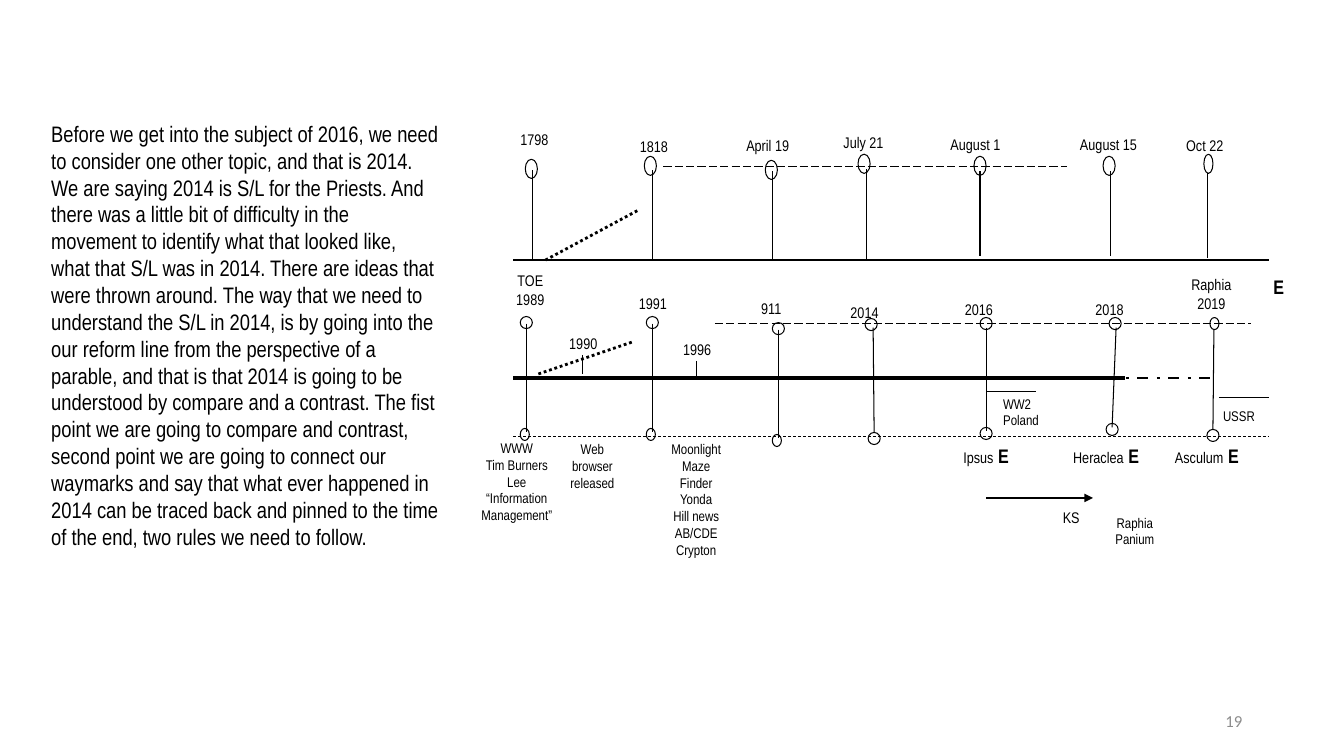
from dataclasses import dataclass
from lxml.etree import SubElement
from pptx import Presentation
from pptx.dml.color import RGBColor
from pptx.enum.dml import MSO_LINE as Dash
from pptx.enum.shapes import MSO_CONNECTOR as Conn, MSO_SHAPE as Form
from pptx.enum.text import MSO_ANCHOR as Anchor, MSO_AUTO_SIZE as Fit, PP_ALIGN as Align
from pptx.oxml.ns import qn
from pptx.util import Emu, Pt

PX = 9144  # 100 px to the inch
COLORS = {"ink": "000000", "page": "8C8C8C"}
FACE = "Arial Narrow"
Box = tuple[int, int, int, int]


@dataclass
class Label:
    text: str  # one paragraph a line
    box: Box
    size: int = 11
    align: Align = Align.CENTER
    mark: str = ""  # large bold ending
    inset: int = 4
    face: str = FACE
    color: str = "ink"
    anchor: Anchor = Anchor.TOP
    fit: Fit = Fit.NONE


@dataclass
class Rule:
    ends: Box  # x1, y1, x2, y2
    width: float = 0.75
    dash: Dash | None = None
    arrow: bool = False


@dataclass
class Post:
    """A dated waymark: its label, its stem and the rings on it."""
    label: Label
    stem: Box
    rings: list[Box]


BODY = (
    "Before we get into the subject of 2016, we need to consider one other topic, "
    "and that is 2014. We are saying 2014 is S/L for the Priests. And there was a "
    "little bit of difficulty in the movement to identify what that looked like, "
    "what that S/L was in 2014. There are ideas that were thrown around. The way "
    "that we need to understand the S/L in 2014, is by going into the our reform "
    "line from the perspective of a parable, and that is that 2014 is going to be "
    "understood by compare and a contrast. The fist point we are going to compare "
    "and contrast, second point we are going to connect our waymarks and say that "
    "what ever happened in 2014 can be traced back and pinned to the time of the "
    "end, two rules we need to follow."
)

POSTS = [
    # upper line
    Post(Label("1798", (509, 125, 42, 29)), (528, 169, 528, 258), [(521, 158, 12, 19)]),
    Post(Label("1818", (628, 132, 41, 22)), (647, 169, 647, 258), [(639, 155, 12, 19)]),
    Post(Label("April 19", (728, 131, 67, 29)), (766, 170, 766, 259), [(759, 159, 12, 19)]),
    Post(Label("July 21", (823, 128, 67, 22)), (859, 168, 859, 257), [(851, 153, 12, 19)]),
    Post(Label("August 1", (934, 130, 67, 25)), (972, 170, 972, 254), [(966, 155, 12, 19)]),
    Post(Label("August 15", (1066, 130, 67, 25)), (1101, 170, 1101, 254), [(1094, 155, 12, 19)]),
    Post(Label("Oct 22", (1162, 131, 66, 25)), (1198, 172, 1198, 256), [(1194, 153, 9, 19)]),
    # lower line
    Post(Label("TOE\n1989", (491, 265, 70, 48)), (522, 321, 522, 429),
         [(516, 314, 12, 12), (516, 425, 9, 12)]),
    Post(Label("1991", (622, 288, 51, 29)), (647, 321, 647, 429),
         [(641, 314, 12, 12), (641, 425, 9, 12)]),
    Post(Label("911", (741, 293, 48, 29)), (772, 327, 772, 435),
         [(766, 320, 12, 12), (766, 431, 9, 12)]),
    Post(Label("2014", (829, 297, 57, 22)), (866, 325, 867, 429),
         [(858, 316, 12, 12), (861, 429, 12, 12)]),
    Post(Label("2016", (941, 294, 60, 23)), (978, 325, 978, 428),
         [(972, 315, 12, 12), (972, 424, 12, 12)]),
    Post(Label("2018", (1072, 294, 57, 23)), (1107, 325, 1103, 424),
         [(1100, 315, 12, 12), (1097, 420, 12, 12)]),
    Post(Label("Raphia\n2019", (1175, 269, 53, 44)), (1204, 327, 1203, 426),
         [(1200, 315, 9, 12), (1197, 426, 12, 12)]),
    # short ticks between
    Post(Label("1990", (553, 327, 51, 30)), (578, 352, 578, 371), []),
    Post(Label("1996", (666, 333, 51, 30)), (691, 358, 691, 377), []),
]

RULES = [
    Rule((509, 258, 1259, 258), 2),
    Rule((509, 375, 1116, 375), 3),
    Rule((1097, 375, 1203, 375), 2, Dash.DASH_DOT),
    Rule((658, 165, 1058, 165), dash=Dash.LONG_DASH),
    Rule((709, 321, 1241, 321), dash=Dash.LONG_DASH),
    Rule((509, 433, 1259, 433), 0.5, Dash.DASH),
    Rule((541, 258, 634, 208), 2, Dash.ROUND_DOT),
    Rule((534, 371, 628, 339), 2, Dash.ROUND_DOT),
    Rule((978, 388, 1028, 388), 0.25),
    Rule((1209, 394, 1259, 394), 0.25),
    Rule((978, 494, 1084, 494), 2, arrow=True),
]

LABELS = [
    Label("WWW\nTim Burners Lee\n“Information Management”", (472, 432, 81, 106), 10),
    Label("Web browser released", (553, 433, 69, 106), 10),
    Label("Moonlight Maze\nFinder\nYonda\nHill news\nAB/CDE\nCrypton", (653, 433, 75, 125), 10),
    Label("Raphia\nPanium", (1091, 506, 69, 44), 10),
    Label("KS", (1047, 500, 31, 28)),
    Label("Ipsus", (934, 436, 88, 44), mark=" E"),
    Label("Heraclea", (1053, 436, 88, 44), mark=" E"),
    Label("Asculum", (1153, 436, 88, 44), mark=" E"),
    Label("", (1259, 269, 25, 38), align=Align.LEFT, mark="E"),
    Label("WW2\nPoland", (991, 388, 50, 44), 10, Align.LEFT),
    Label("USSR", (1209, 400, 50, 25), 10, Align.LEFT),
    Label(BODY, (41, 114, 405, 488), 16, Align.LEFT, inset=10, fit=Fit.SHAPE_TO_FIT_TEXT),
    Label("19", (942, 695, 300, 40), 12, Align.RIGHT, inset=10,
          face="Calibri", color="page", anchor=Anchor.MIDDLE),
]


def scale(box: Box) -> list[Emu]:
    return [Emu(n * PX) for n in box]


def apply(target, form: dict) -> None:
    for key, value in form.items():
        setattr(target, key, value)


def ink(line, width: float) -> None:
    line.color.rgb = RGBColor.from_string(COLORS["ink"])
    line.width = Pt(width)


def draw_rule(shapes, rule: Rule) -> None:
    conn = shapes.add_connector(Conn.STRAIGHT, *scale(rule.ends))
    ink(conn.line, rule.width)
    if rule.dash:
        conn.line.dash_style = rule.dash
    if rule.arrow:
        SubElement(conn.line._get_or_add_ln(), qn("a:tailEnd"), type="triangle")
    SubElement(conn._element.spPr, qn("a:effectLst"))


def draw_ring(shapes, box: Box) -> None:
    ring = shapes.add_shape(Form.OVAL, *scale(box))
    ring.shadow.inherit = False
    ring.fill.background()
    ink(ring.line, 0.75)


def add_run(para, text: str, label: Label, form: dict) -> None:
    run = para.add_run()
    run.text = text
    apply(run.font, {"name": label.face, **form})
    run.font.color.rgb = RGBColor.from_string(COLORS[label.color])


def draw_label(shapes, label: Label) -> None:
    frame = shapes.add_textbox(*scale(label.box)).text_frame
    side, edge = Emu(label.inset * PX), Emu(min(label.inset, 5) * PX)
    apply(frame, {
        "word_wrap": True, "auto_size": label.fit, "vertical_anchor": label.anchor,
        "margin_left": side, "margin_right": side,
        "margin_top": edge, "margin_bottom": edge,
    })
    for i, text in enumerate(label.text.split("\n")):
        para = frame.add_paragraph() if i else frame.paragraphs[0]
        para.alignment = label.align
        if text:
            add_run(para, text, label, {"size": Pt(label.size)})
    if label.mark:
        add_run(para, label.mark, label, {"size": Pt(14), "bold": True})


def draw_post(shapes, post: Post) -> None:
    draw_rule(shapes, Rule(post.stem, 0.75 if post.rings else 0.5))
    for box in post.rings:
        draw_ring(shapes, box)
    draw_label(shapes, post.label)


def main() -> None:
    deck = Presentation()
    apply(deck, {"slide_width": Emu(1333 * PX), "slide_height": Emu(750 * PX)})
    shapes = deck.slides.add_slide(deck.slide_layouts[6]).shapes
    for draw, items in ((draw_post, POSTS), (draw_rule, RULES), (draw_label, LABELS)):
        for item in items:
            draw(shapes, item)
    deck.save("out.pptx")


if __name__ == "__main__":
    main()
